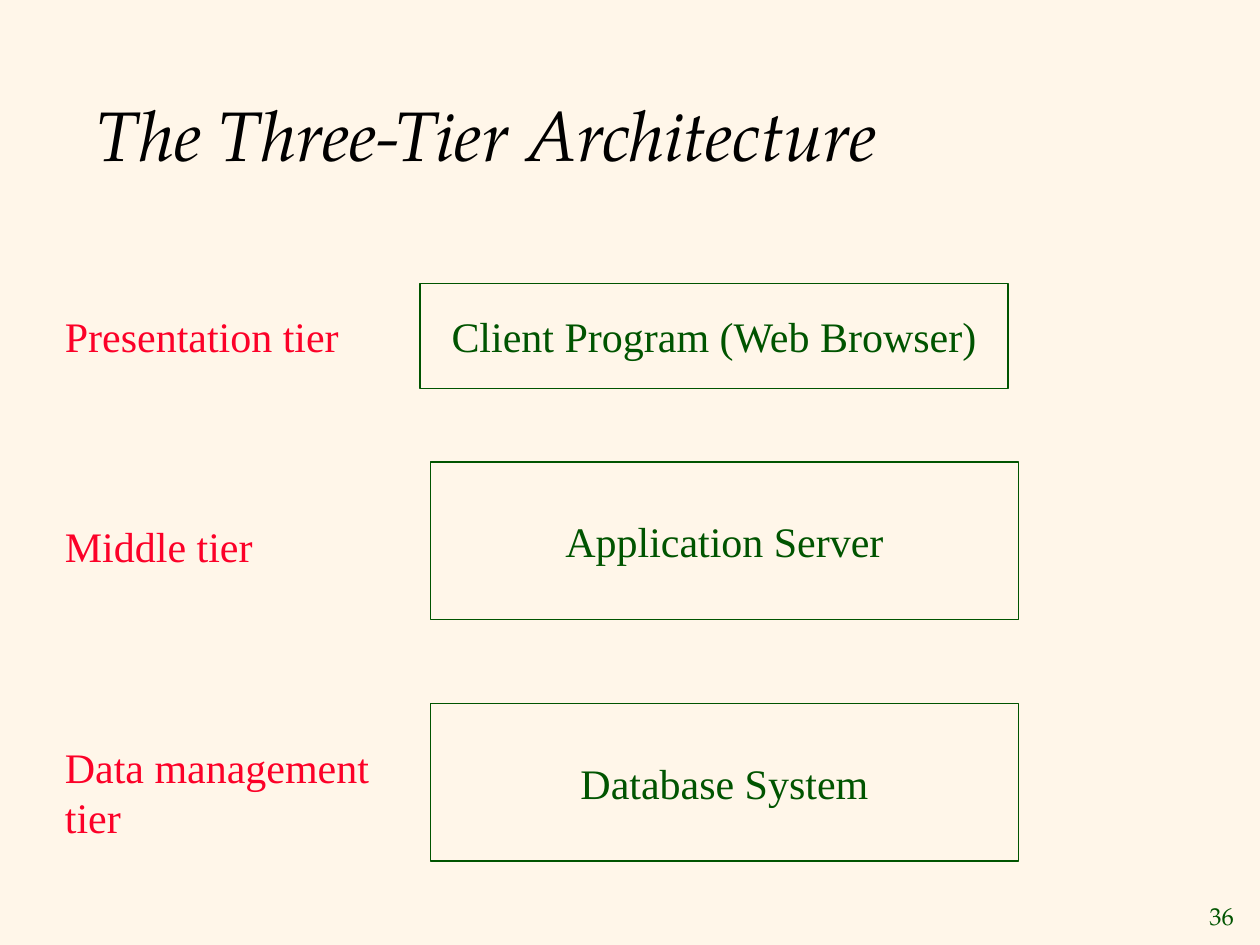
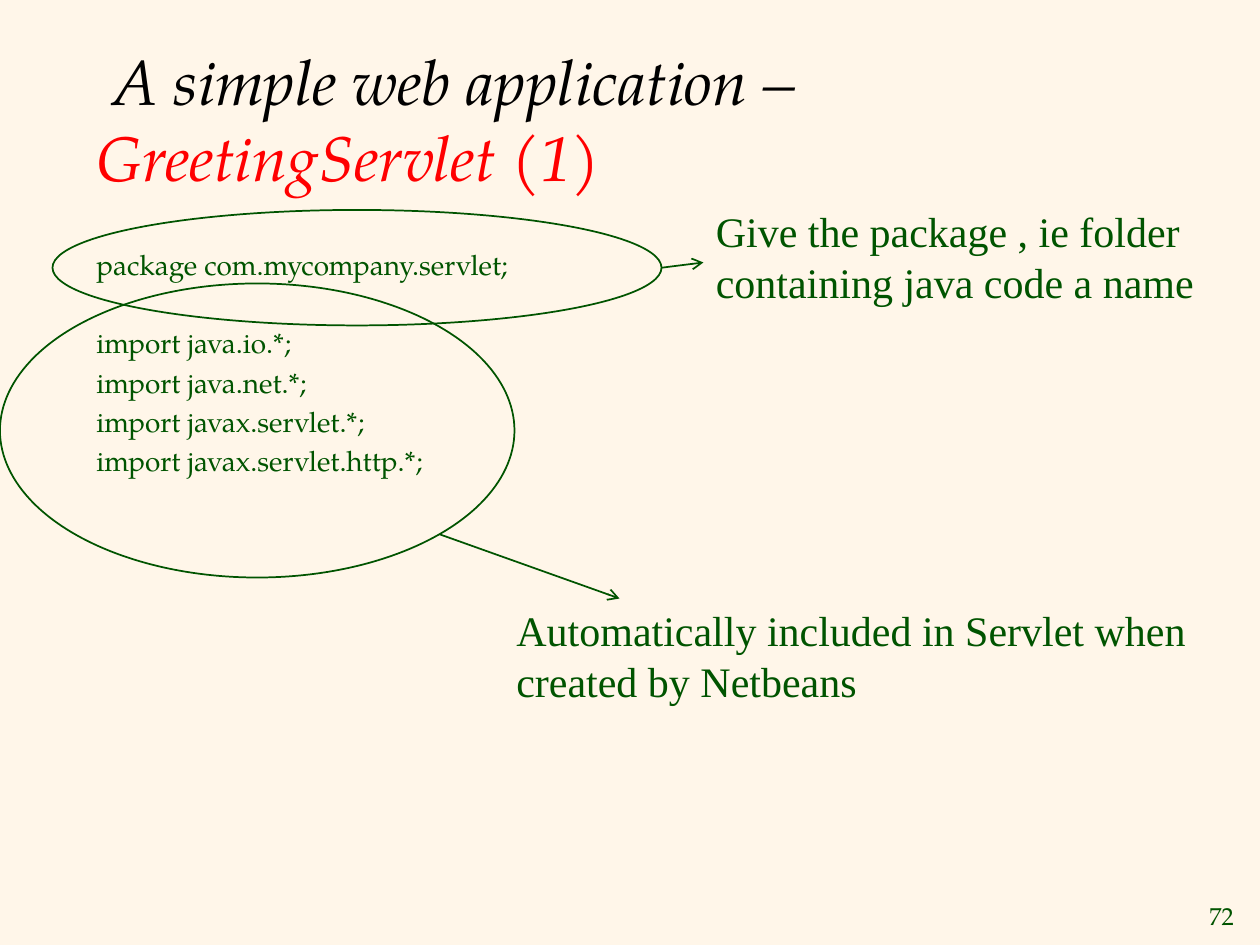
from lxml import etree
from pptx import Presentation
from pptx.dml.color import RGBColor
from pptx.enum.shapes import MSO_CONNECTOR as Connector, MSO_SHAPE as Preset
from pptx.enum.text import MSO_ANCHOR as Anchor, MSO_AUTO_SIZE as AutoSize, PP_ALIGN as Align
from pptx.oxml.ns import qn
from pptx.util import Inches, Pt

CREAM = RGBColor(0xFF, 0xF6, 0xE9)
GREEN = RGBColor(0x00, 0x54, 0x00)
CRIMSON = RGBColor(0xFC, 0x01, 0x28)
RED = RGBColor(0xFF, 0x00, 0x00)
BLACK = RGBColor(0x00, 0x00, 0x00)
SERIF = "Times New Roman"
PAGELLA = "TeX Gyre Pagella"
COLUMNS, ROWS = 120, 90  # twelve grid cells to the inch
CELL = Inches(10) / COLUMNS


def grid(*cells):
    """Turn grid positions into slide lengths."""
    return [round(cell * CELL) for cell in cells]


def write(para, text, size=24, color=GREEN, font=SERIF, italic=False, align=Align.LEFT):
    para.alignment = align
    span = para.add_run()
    span.text = text
    span.font.size = Pt(size)
    span.font.name = font
    span.font.italic = italic
    span.font.color.rgb = color


deck = Presentation()
deck.slide_width, deck.slide_height = grid(COLUMNS, ROWS)
background = deck.slide_master.background.fill
background.solid()
background.fore_color.rgb = CREAM

# Pages with title and number
pages = []
for number, title_top, title_size, title_spans in [
    ("36", 5.5, 40, [("The Three-Tier Architecture", BLACK)]),
    ("72", 4, 36, [(" A simple web application – ", BLACK), ("GreetingServlet (1)", RED)]),
]:
    page = deck.slides.add_slide(deck.slide_layouts[5])
    pages.append(page)
    title = page.shapes.title
    title.left, title.top, title.width, title.height = grid(8, title_top, 105, 14.5)
    title.text_frame.auto_size = AutoSize.NONE
    title.text_frame.vertical_anchor = Anchor.MIDDLE
    for text, color in title_spans:
        write(title.text_frame.paragraphs[0], text, size=title_size, color=color,
              font=PAGELLA, italic=True)

    box = page.shapes.add_textbox(*grid(113.4, 85.2, 5.3, 4))
    box.text_frame.word_wrap = True
    box.text_frame.vertical_anchor = Anchor.MIDDLE
    write(box.text_frame.paragraphs[0], number, size=14, font=PAGELLA, align=Align.RIGHT)
tiers, servlet = pages

# Code, with a wider gap between the package line and the imports
code = servlet.shapes.add_textbox(*grid(8, 23, 105, 60)).text_frame
code.word_wrap = True
for index, (line, gap) in enumerate([
    ("package com.mycompany.servlet;", 0),
    ("import java.io.*;", 25.5),
    ("import java.net.*;", 3.2),
    ("import javax.servlet.*;", 3.2),
    ("import javax.servlet.http.*;", 3.2),
]):
    para = code.add_paragraph() if index else code.paragraphs[0]
    para.space_before = Pt(gap)
    write(para, line, size=16, font=PAGELLA)

# Outlined tier boxes and the ellipses around the code
for page, preset, text, place in [
    (tiers, Preset.RECTANGLE, "Client Program (Web Browser)", (40, 27, 56, 10)),
    (tiers, Preset.RECTANGLE, "Application Server", (41, 44, 56, 15)),
    (tiers, Preset.RECTANGLE, "Database System", (41, 67, 56, 15)),
    (servlet, Preset.OVAL, "", (5, 20, 58, 11)),
    (servlet, Preset.OVAL, "", (0, 27, 49, 28)),
]:
    outline = page.shapes.add_shape(preset, *grid(*place))
    outline.shadow.inherit = False
    outline.fill.background()
    outline.line.color.rgb = GREEN
    outline.line.width = Pt(1)
    outline.text_frame.word_wrap = False
    outline.text_frame.vertical_anchor = Anchor.MIDDLE
    if text:
        write(outline.text_frame.paragraphs[0], text, align=Align.CENTER)

# Tier labels and remarks on the code
for page, text, color, place in [
    (tiers, "Presentation tier", CRIMSON, (5, 29, 32, 6)),
    (tiers, "Middle tier", CRIMSON, (5, 49, 32, 6)),
    (tiers, "Data management tier", CRIMSON, (5, 70, 32, 11)),
    (servlet, "Give the package , ie folder containing java code a name", GREEN, (67, 19, 49, 11)),
    (servlet, "Automatically included in Servlet when created by Netbeans", GREEN, (48, 57, 72, 11)),
]:
    label = page.shapes.add_textbox(*grid(*place))
    label.text_frame.word_wrap = True
    write(label.text_frame.paragraphs[0], text, color=color)

# Arrows from the ellipses to the remarks
for ends in [(63, 25.5, 67, 25), (41.9, 50.9, 59, 57)]:
    arrow = servlet.shapes.add_connector(Connector.STRAIGHT, *grid(*ends))
    arrow.line.color.rgb = GREEN
    arrow.line.width = Pt(1)
    etree.SubElement(arrow.line._get_or_add_ln(), qn("a:tailEnd"), type="arrow")
    etree.SubElement(arrow._element.spPr, qn("a:effectLst"))

deck.save("out.pptx")
